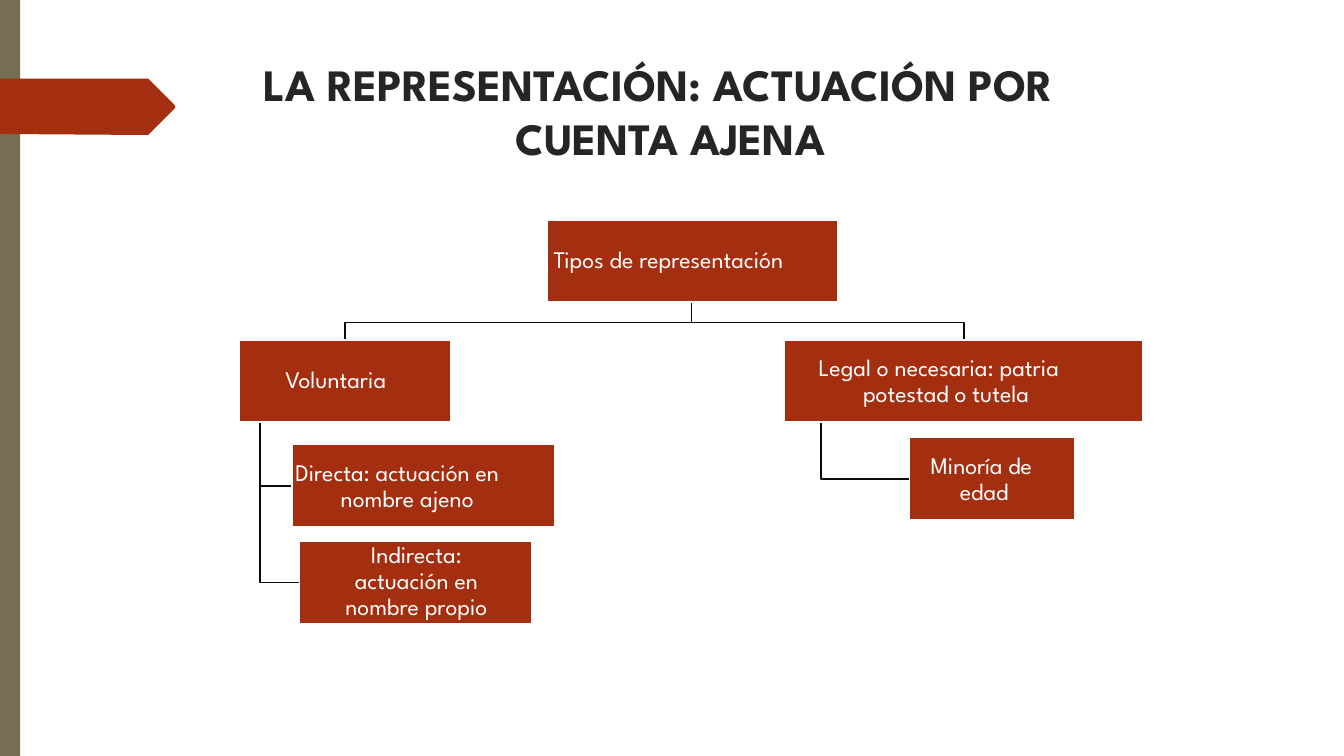
from pptx import Presentation
from pptx.dml.color import RGBColor
from pptx.enum.shapes import MSO_SHAPE
from pptx.enum.text import MSO_ANCHOR, PP_ALIGN
from pptx.util import Inches, Pt

FONT = "League Spartan"
RED, OLIVE, WHITE, INK, LINE = "A42F10", "766E53", "FFFFFF", "252525", "0A0D07"
BOX_HEIGHT = 0.82

TITLE = "LA REPRESENTACIÓN: ACTUACIÓN POR CUENTA AJENA"
# text, left, top, width, top inset, (left margin, first-line indent, right margin), line spacing, alignment
BOXES = [
    ("Tipos de representación", 5.43, 2.18, 2.88, 0.25, (0.06, 0, 0), 1.0, PP_ALIGN.LEFT),
    ("Voluntaria", 2.37, 3.37, 2.1, 0.25, (0.46, 0, 0), 1.0, PP_ALIGN.LEFT),
    ("Directa: actuación en nombre ajeno", 2.9, 4.41, 2.6, 0.15,
     (0.48, -0.45, 0.2), Pt(18.7), PP_ALIGN.LEFT),
    ("Indirecta: actuación en nombre propio", 2.97, 5.37, 2.31, 0.01,
     (0.29, 0, 0.28), 0.92, PP_ALIGN.CENTER),
    ("Legal o necesaria: patria potestad o tutela", 7.78, 3.37, 3.56, 0.15,
     (0.78, -0.44, 0.2), Pt(18.7), PP_ALIGN.LEFT),
    ("Minoría de edad", 9.02, 4.34, 1.64, 0.15, (0.5, -0.29, 0.2), Pt(18.7), PP_ALIGN.LEFT),
]
BRANCHES = [
    [[(8.14, 4.19), (8.14, 4.75), (9.02, 4.75)]],
    [[(2.58, 4.19), (2.58, 5.78), (2.97, 5.78)],
     [(2.58, 4.82), (2.9, 4.82)]],
    [[(3.42, 3.37), (3.42, 3.2), (9.56, 3.2), (9.56, 3.37)],
     [(6.86, 3), (6.86, 3.2)]],
]
RIBBON = [(0, 0.78), (1.47, 0.78), (1.49, 0.8), (1.73, 1.04), (1.74, 1.06),
          (1.73, 1.08), (1.48, 1.33), (1.47, 1.34), (0, 1.33)]


def color(value):
    return RGBColor.from_string(value)


def paint(shape, fill=None, line=None):
    shape.shadow.inherit = False
    if fill:
        shape.fill.solid()
        shape.fill.fore_color.rgb = color(fill)
    else:
        shape.fill.background()
    if line:
        shape.line.color.rgb = color(line)
        shape.line.width = Pt(1.25)
    else:
        shape.line.fill.background()


def outline(slide, contours, closed):
    points = [[(Inches(x), Inches(y)) for x, y in contour] for contour in contours]
    builder = slide.shapes.build_freeform(*points[0][0], scale=1.0)
    for number, contour in enumerate(points):
        if number:
            builder.move_to(*contour[0])
        builder.add_line_segments(contour[1:], close=closed)
    return builder.convert_to_shape()


def write(shape, text, size, ink, top_inset, margins, spacing, alignment, bold=False):
    frame = shape.text_frame
    frame.word_wrap = True
    frame.vertical_anchor = MSO_ANCHOR.TOP
    frame.margin_left = frame.margin_right = frame.margin_bottom = 0
    frame.margin_top = Inches(top_inset)
    paragraph = frame.paragraphs[0]
    paragraph.alignment = alignment
    paragraph.line_spacing = spacing
    properties = paragraph._p.get_or_add_pPr()
    for name, length in zip(("marL", "indent", "marR"), margins):
        properties.set(name, str(Inches(length)))
    run = paragraph.add_run()
    run.text = text
    run.font.name = FONT
    run.font.size = Pt(size)
    run.font.bold = bold
    run.font.color.rgb = color(ink)


def main():
    deck = Presentation()
    deck.slide_width, deck.slide_height = Inches(13.33), Inches(7.5)
    slide = deck.slides.add_slide(deck.slide_layouts[5])

    side_bar = slide.shapes.add_shape(MSO_SHAPE.RECTANGLE, 0, 0, Inches(0.2), Inches(7.5))
    paint(side_bar, OLIVE)
    paint(outline(slide, [RIBBON], closed=True), RED)

    title = slide.shapes.title
    title.left, title.top, title.width, title.height = map(Inches, (2.6, 0.55, 8.29, 1.1))
    write(title, TITLE, 32, INK, 0.01, (2.51, -2.5, 0), 1.0, PP_ALIGN.LEFT, bold=True)

    for contours in BRANCHES:
        paint(outline(slide, contours, closed=False), line=LINE)

    for text, left, top, width, *layout in BOXES:
        box = slide.shapes.add_shape(
            MSO_SHAPE.RECTANGLE, *map(Inches, (left, top, width, BOX_HEIGHT)))
        paint(box, RED, WHITE)
        write(box, text, 17, WHITE, *layout)

    deck.save("out.pptx")


if __name__ == "__main__":
    main()
